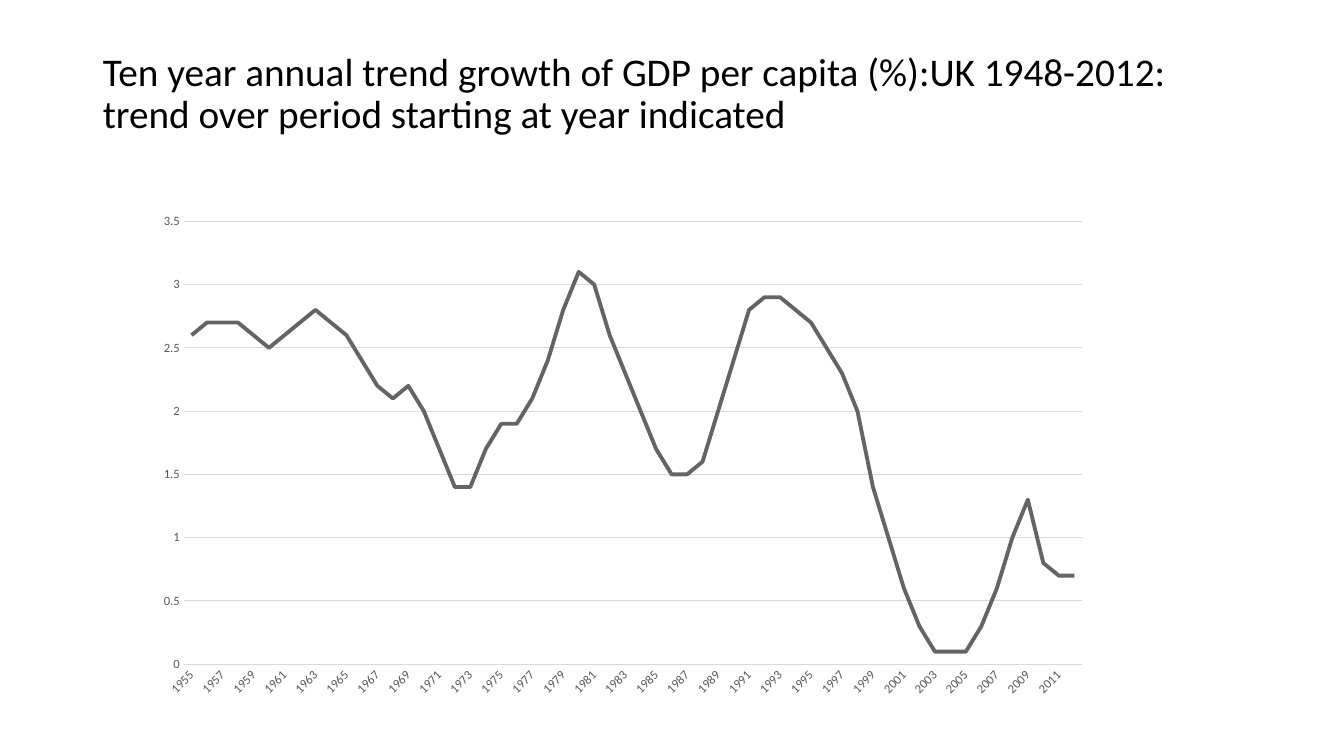
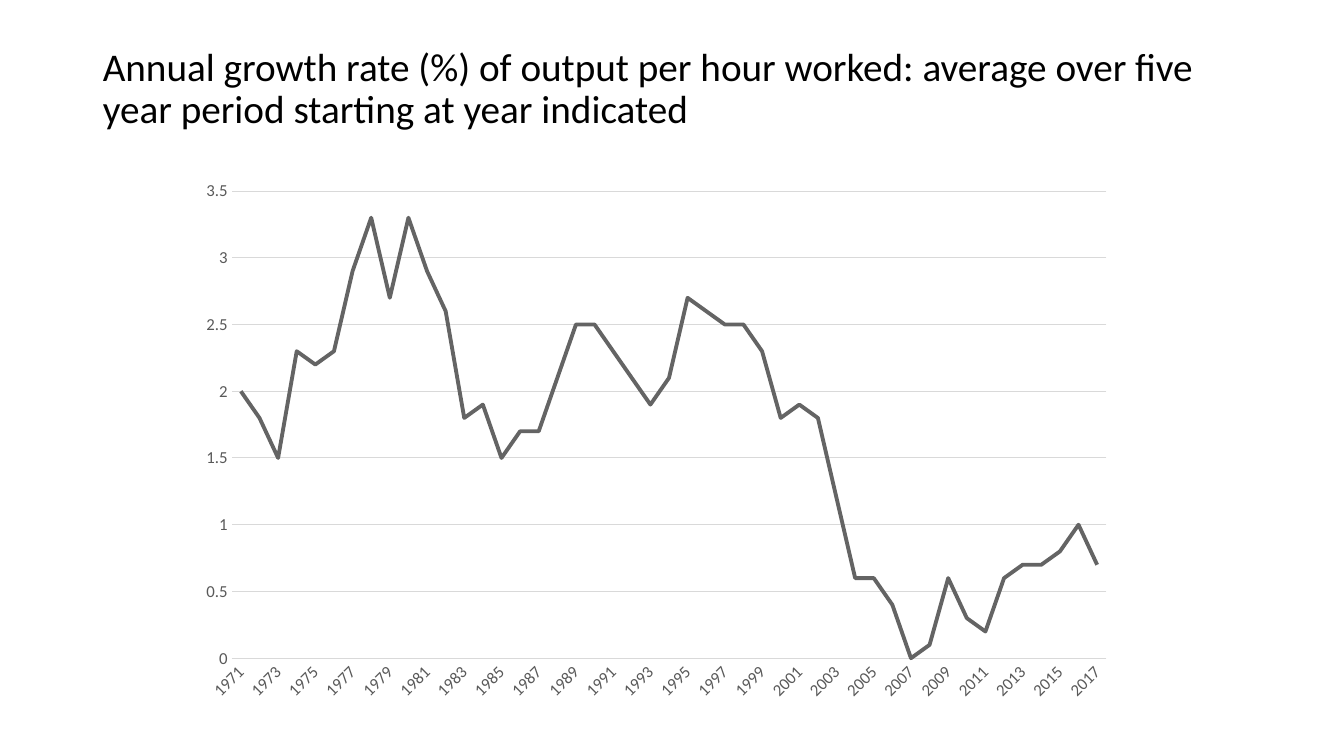
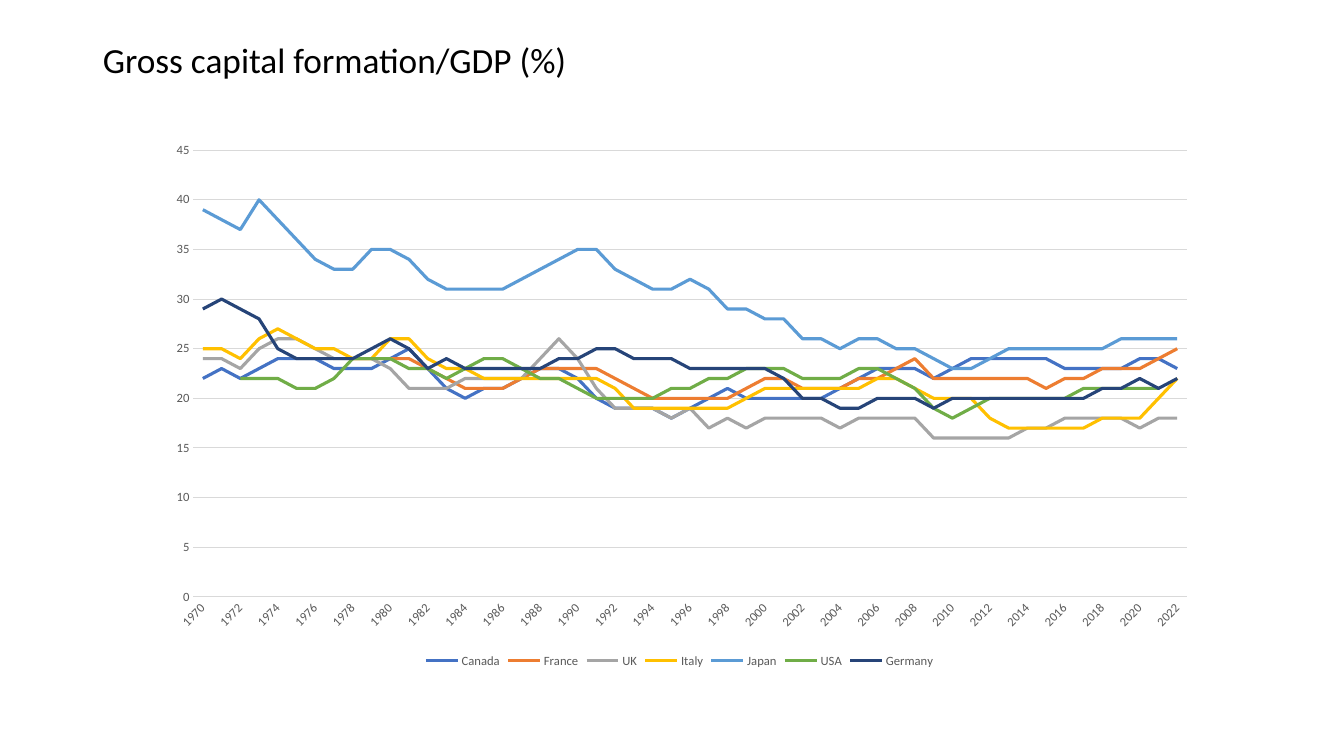
from dataclasses import dataclass

from pptx import Presentation
from pptx.chart.data import CategoryChartData
from pptx.dml.color import RGBColor
from pptx.enum.chart import XL_CHART_TYPE as ChartType
from pptx.enum.chart import XL_LEGEND_POSITION as LegendPosition
from pptx.enum.chart import XL_MARKER_STYLE as MarkerStyle
from pptx.enum.chart import XL_TICK_MARK as TickMark
from pptx.enum.text import MSO_ANCHOR as Anchor
from pptx.enum.text import MSO_AUTO_SIZE as AutoSize
from pptx.enum.text import PP_ALIGN as Align
from pptx.oxml import parse_xml
from pptx.oxml.ns import nsdecls, qn
from pptx.util import Inches, Pt


@dataclass(frozen=True)
class Theme:
    font: str = "Calibri"
    ink: str = "000000"
    label: str = "595959"
    grid: str = "D9D9D9"
    trend: str = "646464"
    title_size: float = 28
    short_title_size: float = 25.2
    label_size: float = 9
    large_label_size: float = 12
    grid_width: float = 0.75
    trend_width: float = 2.75
    country_width: float = 2.25


theme = Theme()
deck = Presentation()
deck.slide_width, deck.slide_height = Inches(13.33), Inches(7.5)


def place(left, top, width, height):
    across, down = deck.slide_width / 100, deck.slide_height / 100
    return [int(n) for n in (left * across, top * down, width * across, height * down)]


def style_font(font, size, color):
    font.name = theme.font
    font.size = Pt(size)
    font.color.rgb = RGBColor.from_string(color)


gdp_trend = [
    2.6, 2.7, 2.7, 2.7, 2.6, 2.5, 2.6, 2.7, 2.8, 2.7, 2.6, 2.4, 2.2, 2.1, 2.2,
    2, 1.7, 1.4, 1.4, 1.7, 1.9, 1.9, 2.1, 2.4, 2.8, 3.1, 3, 2.6, 2.3, 2,
    1.7, 1.5, 1.5, 1.6, 2, 2.4, 2.8, 2.9, 2.9, 2.8, 2.7, 2.5, 2.3, 2, 1.4,
    1, 0.6, 0.3, 0.1, 0.1, 0.1, 0.3, 0.6, 1, 1.3, 0.8, 0.7, 0.7,
]
hourly_output = [
    2, 1.8, 1.5, 2.3, 2.2, 2.3, 2.9, 3.3, 2.7, 3.3, 2.9, 2.6, 1.8, 1.9, 1.5, 1.7,
    1.7, 2.1, 2.5, 2.5, 2.3, 2.1, 1.9, 2.1, 2.7, 2.6, 2.5, 2.5, 2.3, 1.8, 1.9, 1.8,
    1.2, 0.6, 0.6, 0.4, 0, 0.1, 0.6, 0.3, 0.2, 0.6, 0.7, 0.7, 0.8, 1, 0.7,
]
canada = [
    22, 23, 22, 23, 24, 24, 24, 23, 23, 23, 24, 25, 23, 21, 20, 21, 21, 22,
    23, 23, 22, 20, 19, 19, 19, 18, 19, 20, 21, 20, 20, 20, 20, 20, 21, 22,
    23, 23, 23, 22, 23, 24, 24, 24, 24, 24, 23, 23, 23, 23, 24, 24, 23,
]
france = [None] * 8 + [
    24, 24, 24, 24, 23, 22, 21, 21, 21, 22, 23, 23, 23, 23, 22, 21, 20, 20, 20,
    20, 20, 21, 22, 22, 21, 21, 21, 22, 22, 23, 24, 22, 22, 22, 22, 22, 22, 21,
    22, 22, 23, 23, 23, 24, 25,
]
uk = [
    24, 24, 23, 25, 26, 26, 25, 24, 24, 24, 23, 21, 21, 21, 22, 22, 22, 22,
    24, 26, 24, 21, 19, 19, 19, 18, 19, 17, 18, 17, 18, 18, 18, 18, 17, 18,
    18, 18, 18, 16, 16, 16, 16, 16, 17, 17, 18, 18, 18, 18, 17, 18, 18,
]
italy = [
    25, 25, 24, 26, 27, 26, 25, 25, 24, 24, 26, 26, 24, 23, 23, 22, 22, 22,
    22, 22, 22, 22, 21, 19, 19, 19, 19, 19, 19, 20, 21, 21, 21, 21, 21, 21,
    22, 22, 21, 20, 20, 20, 18, 17, 17, 17, 17, 17, 18, 18, 18, 20, 22,
]
japan = [
    39, 38, 37, 40, 38, 36, 34, 33, 33, 35, 35, 34, 32, 31, 31, 31, 31, 32,
    33, 34, 35, 35, 33, 32, 31, 31, 32, 31, 29, 29, 28, 28, 26, 26, 25, 26,
    26, 25, 25, 24, 23, 23, 24, 25, 25, 25, 25, 25, 25, 26, 26, 26, 26,
]
usa = [
    None, None, 22, 22, 22, 21, 21, 22, 24, 24, 24, 23, 23, 22, 23, 24, 24, 23,
    22, 22, 21, 20, 20, 20, 20, 21, 21, 22, 22, 23, 23, 23, 22, 22, 22, 23,
    23, 22, 21, 19, 18, 19, 20, 20, 20, 20, 20, 21, 21, 21, 21, 21, None,
]
germany = [
    29, 30, 29, 28, 25, 24, 24, 24, 24, 25, 26, 25, 23, 24, 23, 23, 23, 23,
    23, 24, 24, 25, 25, 24, 24, 24, 23, 23, 23, 23, 23, 22, 20, 20, 19, 19,
    20, 20, 20, 19, 20, 20, 20, 20, 20, 20, 20, 20, 21, 21, 22, 21, 22,
]

pages = [
    dict(
        title="Ten year annual trend growth of GDP per capita (%):UK 1948-2012: "
              "trend over period starting at year indicated",
        title_size=theme.title_size, title_at=(6.9, 5.33, 86.27, 14.4), anchor=Anchor.MIDDLE,
        chart_at=(10.8, 22.13, 71.87, 71.47), plot=(0.04, 0.1, 0.93, 0.82),
        start=1955, top=3.5, step=0.5, label_size=theme.label_size, axis_width=1,
        line_width=theme.trend_width,
        series=[("Series 1", theme.trend, gdp_trend)],
    ),
    dict(
        title="Annual growth rate (%) of output per hour worked: "
              "average over five year period starting at year indicated",
        title_size=theme.title_size, title_at=(6.9, 5.73, 86.27, 12.27), anchor=Anchor.MIDDLE,
        chart_at=(13.73, 22.4, 70, 71.87), plot=(0.05, 0.04, 0.93, 0.86),
        start=1971, top=3.5, step=0.5, label_size=theme.large_label_size, axis_width=1,
        line_width=theme.trend_width,
        series=[("Series 1", theme.trend, hourly_output)],
    ),
    dict(
        title="Gross capital formation/GDP (%)",
        title_size=theme.short_title_size, title_at=(6.9, 5.73, 86.27, 13.07), anchor=Anchor.TOP,
        chart_at=(11.25, 17.73, 78.62, 71.2), plot=(0.04, 0.03, 0.94, 0.83),
        start=1970, top=45, step=5, label_size=theme.label_size, axis_width=theme.grid_width,
        line_width=theme.country_width,
        series=[
            ("Canada", "4472C4", canada),
            ("France", "ED7D31", france),
            ("UK", "A5A5A5", uk),
            ("Italy", "FFC000", italy),
            ("Japan", "5B9BD5", japan),
            ("USA", "70AD47", usa),
            ("Germany", "264478", germany),
        ],
    ),
]

for page in pages:
    slide = deck.slides.add_slide(deck.slide_layouts[5])
    title = slide.shapes.title
    title.left, title.top, title.width, title.height = place(*page["title_at"])
    frame = title.text_frame
    frame.text = page["title"]
    frame.word_wrap = True
    frame.auto_size = AutoSize.NONE
    frame.vertical_anchor = page["anchor"]
    frame.margin_top = frame.margin_bottom = 0
    para = frame.paragraphs[0]
    para.alignment = Align.LEFT
    para.line_spacing = 0.9
    style_font(para.runs[0].font, page["title_size"], theme.ink)

    series_list = page["series"]
    data = CategoryChartData()
    data.categories = [str(page["start"] + n) for n in range(len(series_list[0][2]))]
    for name, color, values in series_list:
        data.add_series(name, values)
    chart = slide.shapes.add_chart(ChartType.LINE, *place(*page["chart_at"]), data).chart
    chart.has_title = False
    style_font(chart.font, 10, theme.ink)
    chart.plots[0].vary_by_categories = False

    for line, (name, color, values) in zip(chart.plots[0].series, series_list):
        line.smooth = False
        line.marker.style = MarkerStyle.NONE
        line.format.line.width = Pt(page["line_width"])
        line.format.line.color.rgb = RGBColor.from_string(color)

    years, scale = chart.category_axis, chart.value_axis
    for axis in (years, scale):
        axis.major_tick_mark = axis.minor_tick_mark = TickMark.NONE
        style_font(axis.tick_labels.font, page["label_size"], theme.label)
    years.has_major_gridlines = False
    years.format.line.width = Pt(page["axis_width"])
    years.format.line.color.rgb = RGBColor.from_string(theme.grid)
    scale.format.line.fill.background()
    scale.minimum_scale, scale.maximum_scale = 0, page["top"]
    scale.major_unit = page["step"]
    scale.has_major_gridlines = True
    scale.major_gridlines.format.line.width = Pt(theme.grid_width)
    scale.major_gridlines.format.line.color.rgb = RGBColor.from_string(theme.grid)

    chart.has_legend = len(series_list) > 1
    if chart.has_legend:
        chart.legend.position = LegendPosition.BOTTOM
        chart.legend.include_in_layout = False
        style_font(chart.legend.font, theme.label_size, theme.label)

    plot_area = chart.element.find(".//" + qn("c:plotArea"))
    year_axis = plot_area.find(qn("c:catAx"))
    year_axis.find(qn("c:txPr")).find(qn("a:bodyPr")).set("rot", "-2700000")
    year_axis.find(qn("c:noMultiLvlLbl")).addprevious(
        parse_xml(f'<c:tickLblSkip {nsdecls("c")} val="2"/>'))
    for layout in plot_area.findall(qn("c:layout")):
        plot_area.remove(layout)
    sides = "".join(f'<c:{tag} val="{share}"/>' for tag, share in zip("xywh", page["plot"]))
    plot_area.insert(0, parse_xml(
        f'<c:layout {nsdecls("c")}><c:manualLayout><c:layoutTarget val="inner"/>'
        f'<c:xMode val="edge"/><c:yMode val="edge"/>{sides}</c:manualLayout></c:layout>'))

deck.save("out.pptx")
